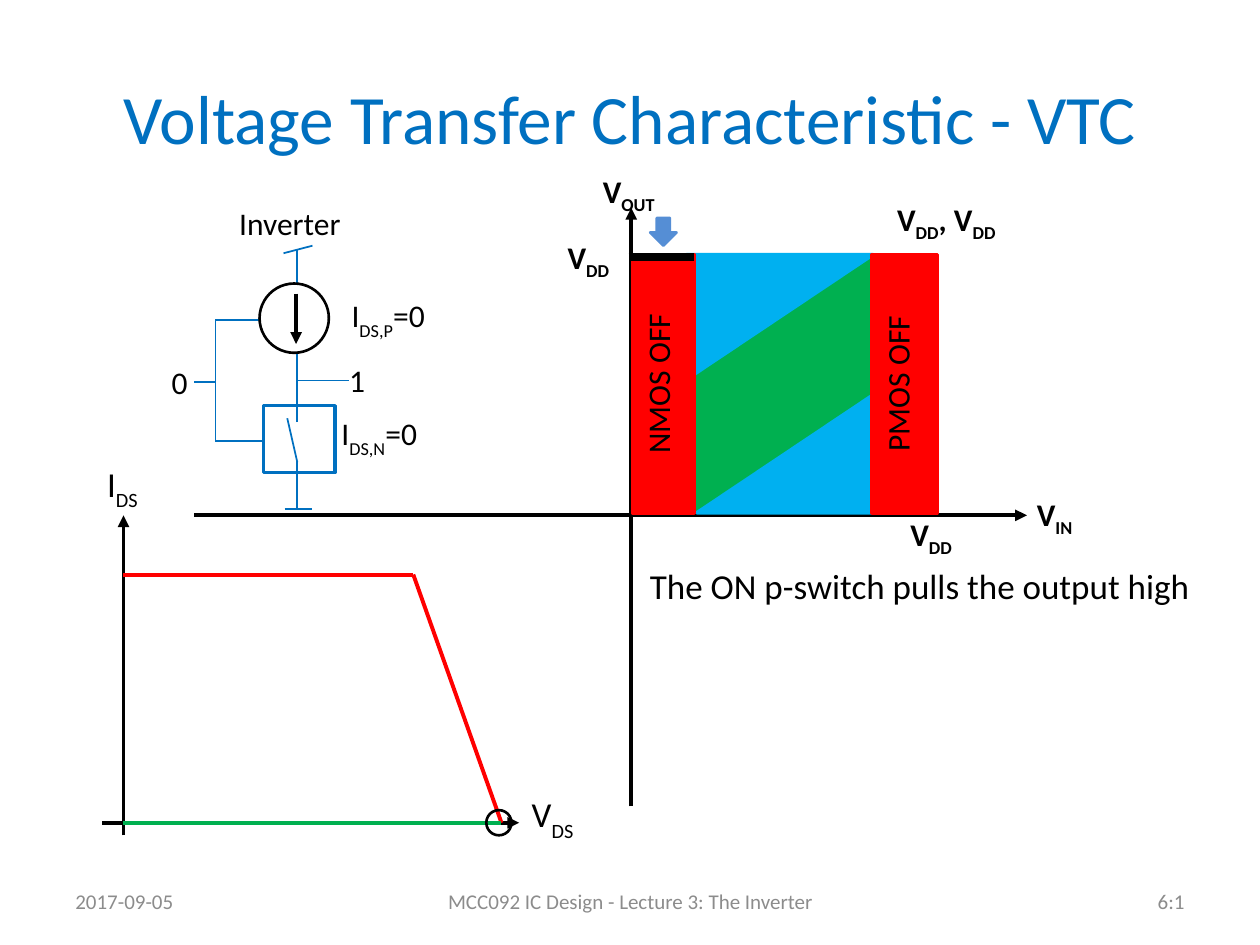
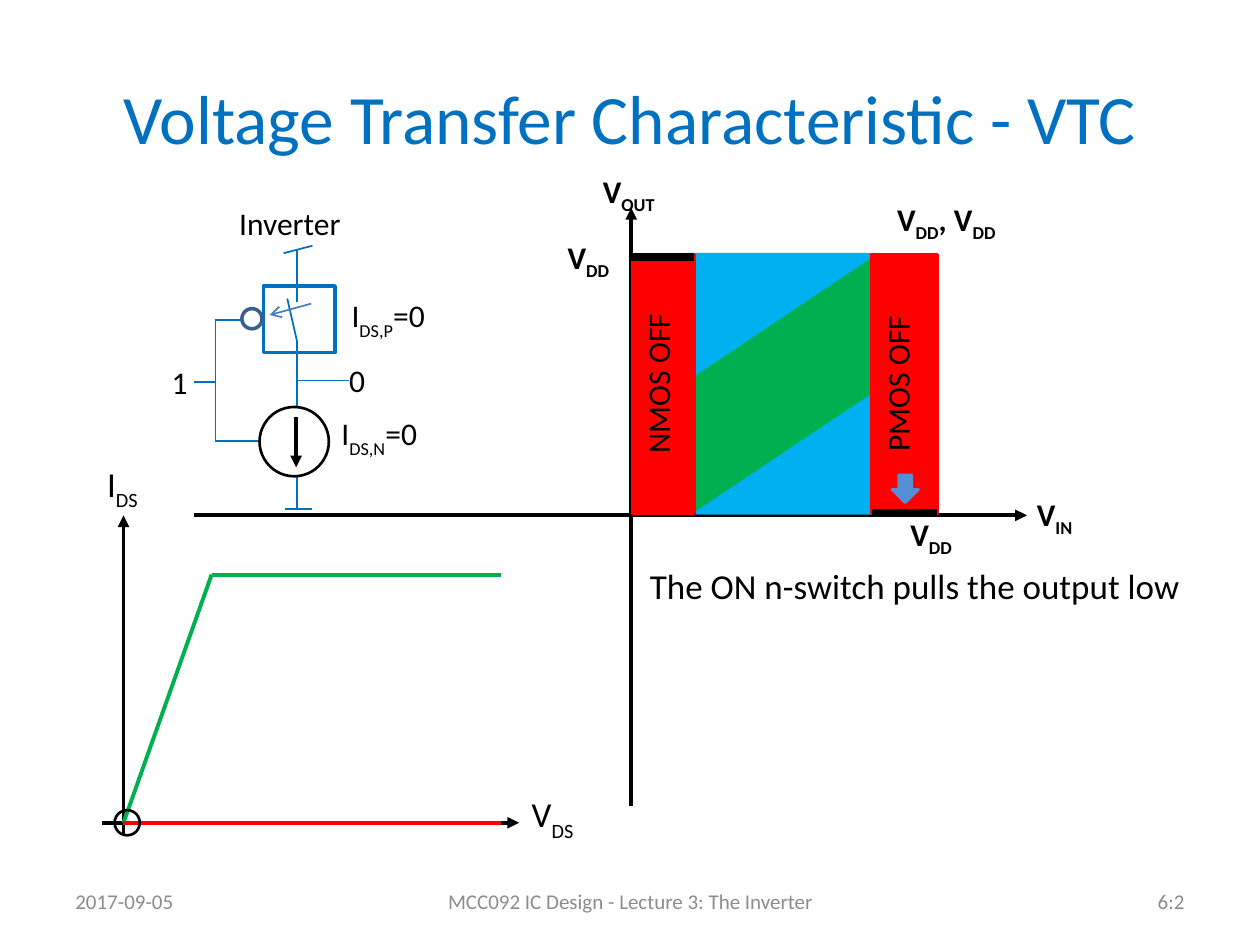
from itertools import pairwise

from lxml import etree
from pptx import Presentation
from pptx import util as u
from pptx.dml.color import RGBColor
from pptx.enum import shapes, text
from pptx.oxml.ns import qn

BLUE, SKY, GREEN, RED = "0070C0", "00B0F0", "00B050", "FF0000"
BLACK, WHITE, GREY = "000000", "FFFFFF", "8C8C8C"

THEME = {
    "font": "Calibri",
    # size, colour, bold, subscript baseline
    "text": {
        "title": (39.6, BLUE, False, 0),
        "footer": (12, GREY, False, 0),
        "node": (18, BLACK, False, -30000),
        "voltage": (18, BLACK, True, -25000),
        "graph": (20, BLACK, False, -30000),
    },
    # colour, width, arrowhead at the end
    "line": {
        "wire": (BLUE, 1, None),
        "blade arrow": ("4B7EBC", 1, "arrow"),
        "axis": (BLACK, 2.25, "triangle"),
        "p current": (RED, 2.25, None),
        "n current": (GREEN, 2.25, None),
        "transfer": (BLACK, 4.5, None),
    },
}

LEFT, CENTER, RIGHT = text.PP_ALIGN.LEFT, text.PP_ALIGN.CENTER, text.PP_ALIGN.RIGHT
MIDDLE = {"vertical_anchor": text.MSO_ANCHOR.MIDDLE}
NO_LEFT_INSET = {"margin_left": 0}
NO_WRAP = {"word_wrap": False}
TIGHT = {
    "margin_left": u.Inches(0.07),
    "margin_right": u.Inches(0.07),
    "margin_top": u.Inches(0.03),
    "margin_bottom": u.Inches(0.03),
}

STATES = [
    {
        "input": "0", "output": "1",
        "message": "The ON p-switch pulls the output high",
        "switch_top": 3.22, "source_top": 2.25, "p_is_switch": False,
        "load": [("p current", [(0.98, 4.56), (3.28, 4.56), (3.98, 6.53)]),
                 ("n current", [(0.98, 6.53), (3.98, 6.53)])],
        "operating_point": (3.86, 6.43), "pointer": (5.16, 1.73),
        "transfer": [(4.99, 2.04, 5.51, 2.04)],
    },
    {
        "input": "1", "output": "0",
        "message": "The ON n-switch pulls the output low",
        "switch_top": 2.27, "source_top": 3.23, "p_is_switch": True,
        "load": [("n current", [(3.98, 4.56), (1.68, 4.56), (0.98, 6.53)]),
                 ("p current", [(0.98, 6.53), (3.98, 6.53)])],
        "operating_point": (0.91, 6.43), "pointer": (7.08, 3.77),
        "transfer": [(4.99, 2.04, 5.51, 2.04), (6.92, 4.07, 7.44, 4.07)],
    },
]

GATE_X, DRAIN_X = 1.71, 2.36
INVERTER_WIRES = [
    (GATE_X, 3.5, 2.09, 3.5),
    (GATE_X, 2.54, 2.19, 2.54),
    (GATE_X, 3.5, GATE_X, 2.54),
    (1.54, 3.03, GATE_X, 3.03),
    (DRAIN_X, 4.03, DRAIN_X, 2.93),
    (DRAIN_X, 3.08, DRAIN_X, 1.98),
    (DRAIN_X, 3.02, 2.77, 3.02),
    (2.26, 4.04, 2.48, 4.04),
    (2.25, 2.01, 2.48, 1.95),
]
AXES = [
    (5.01, 6.4, 5.01, 1.65),
    (1.54, 4.09, 8.15, 4.09),
    (0.98, 6.63, 0.98, 4.09),
    (0.81, 6.53, 4.12, 6.53),
]
VTC_TOP, VTC_HEIGHT = 2.02, 2.05
SATURATION_LIMITS = [
    [(6.93, 2.02), (5.45, 3.01), (5.45, 2.02)],
    [(5.53, 4.07), (7.01, 3.08), (7.01, 4.07)],
]
OFF_REGIONS = [("NMOS OFF", 5.02, 0.49), ("PMOS OFF", 6.92, 0.52)]


def draw_line(slide, style, *ends):
    colour, width, arrowhead = THEME["line"][style]
    line = slide.shapes.add_connector(
        shapes.MSO_CONNECTOR.STRAIGHT, *map(u.Inches, ends))
    line.line.color.rgb = RGBColor.from_string(colour)
    line.line.width = u.Pt(width)
    properties = line._element.spPr
    if arrowhead:
        etree.SubElement(line.line._get_or_add_ln(), qn("a:tailEnd"), type=arrowhead)
    etree.SubElement(properties, qn("a:effectLst"))


def write(frame, words, style, align, formats):
    """Fill a frame; every second part between bars becomes a subscript."""
    size, colour, bold, baseline = THEME["text"][style]
    for name, value in {"word_wrap": True, **formats}.items():
        setattr(frame, name, value)
    paragraph = frame.paragraphs[0]
    paragraph.alignment = align
    for index, part in enumerate(words.split("|")):
        if not part:
            continue
        run = paragraph.add_run()
        run.text = part
        values = {"name": THEME["font"], "size": u.Pt(size), "bold": bold}
        for name, value in values.items():
            setattr(run.font, name, value)
        run.font.color.rgb = RGBColor.from_string(colour)
        if index % 2:
            run.font._rPr.set("baseline", str(baseline))


deck = Presentation()
deck.slide_width, deck.slide_height = u.Inches(10), u.Inches(7.5)

for number, state in enumerate(STATES, start=1):
    slide = deck.slides.add_slide(deck.slide_layouts[6])
    add_shape = slide.shapes.add_shape
    preset = shapes.MSO_SHAPE
    switch_top, source_top = state["switch_top"], state["source_top"]

    # Lines that lie behind the devices
    for wire in INVERTER_WIRES:
        draw_line(slide, "wire", *wire)
    for axis in AXES:
        draw_line(slide, "axis", *axis)
    for style, points in state["load"]:
        for start, end in pairwise(points):
            draw_line(slide, style, *start, *end)

    # Devices, operating regions and markers: kind, place, fill, outline, width
    blocks = [
        (preset.RECTANGLE, (2.09, switch_top, 0.57, 0.53), WHITE, BLUE, 2),
        (preset.OVAL, (2.06, source_top, 0.55, 0.55), WHITE, BLACK, 1.5),
        (preset.OVAL, (*state["operating_point"], 0.2, 0.2), None, BLACK, 1.5),
        (preset.RECTANGLE, (5.4, VTC_TOP, 1.66, VTC_HEIGHT), GREEN, GREEN, 1.5),
    ]
    if state["p_is_switch"]:
        blocks.append((preset.OVAL, (1.92, 2.45, 0.16, 0.16), WHITE, "3A5F8C", 2))
    painted = [(add_shape(kind, *map(u.Inches, place)), *paint)
               for kind, place, *paint in blocks]

    for corners in SATURATION_LIMITS:
        (first, *rest) = [tuple(map(u.Inches, corner)) for corner in corners]
        outline = slide.shapes.build_freeform(*first)
        outline.add_line_segments(rest, close=True)
        painted.append((outline.convert_to_shape(), SKY, SKY, 2))

    for words, left, width in OFF_REGIONS:
        region = add_shape(preset.RECTANGLE, *map(
            u.Inches, (left, VTC_TOP, width, VTC_HEIGHT)))
        write(region.text_frame, words, "node", CENTER,
              {"vertical_anchor": text.MSO_ANCHOR.TOP})
        region.text_frame._txBody.bodyPr.set("vert", "vert270")
        painted.append((region, RED, RED, 2))

    pointer = add_shape(preset.DOWN_ARROW, *map(
        u.Inches, (*state["pointer"], 0.21, 0.22)))
    painted.append((pointer, "558ED5", "558ED5", 1.5))

    for shape, fill, outline_colour, width in painted:
        shape.shadow.inherit = False
        if fill:
            shape.fill.solid()
            shape.fill.fore_color.rgb = RGBColor.from_string(fill)
        else:
            shape.fill.background()
        shape.line.color.rgb = RGBColor.from_string(outline_colour)
        shape.line.width = u.Pt(width)

    # Lines on top of the devices
    for x1, y1, x2, y2 in [(DRAIN_X, 0.66, DRAIN_X, 0.44),
                           (DRAIN_X, 0.13, DRAIN_X, -0.09),
                           (DRAIN_X, 0.45, 2.28, 0.1)]:
        draw_line(slide, "wire", x1, switch_top + y1, x2, switch_top + y2)
    if state["p_is_switch"]:
        draw_line(slide, "blade arrow", 2.47, 2.41, 2.14, 2.5)
    draw_line(slide, "axis", 2.35, source_top + 0.08, 2.35, source_top + 0.48)
    for level in state["transfer"]:
        draw_line(slide, "transfer", *level)

    # Wording: text, style, alignment, place, frame formats
    captions = [
        ("Voltage Transfer Characteristic - VTC", "title", CENTER,
         (0.5, 0.3, 9, 1.25), MIDDLE),
        ("2017-09-05", "footer", LEFT, (0.5, 6.95, 2.33, 0.4), MIDDLE),
        ("MCC092 IC Design - Lecture 3: The Inverter", "footer", CENTER,
         (3.42, 6.95, 3.17, 0.4), MIDDLE),
        (f"6:{number}", "footer", RIGHT, (7.17, 6.95, 2.33, 0.4), MIDDLE),
        ("Inverter", "node", LEFT, (1.8, 1.57, 1.01, 0.4), NO_WRAP),
        (state["input"], "node", CENTER, (1.18, 2.83, 0.49, 0.4), {}),
        (state["output"], "node", LEFT, (2.77, 2.82, 0.79, 0.4), NO_LEFT_INSET),
        ("I|DS,P|=0", "node", LEFT, (2.72, 2.32, 0.97, 0.57), TIGHT),
        ("I|DS,N|=0", "node", LEFT, (2.64, 3.26, 0.97, 0.57), TIGHT),
        ("V|IN", "voltage", CENTER, (8.04, 3.88, 0.66, 0.4), {}),
        ("V|OUT", "voltage", CENTER, (4.58, 1.32, 0.82, 0.4), {}),
        ("V|DD", "voltage", CENTER, (7.06, 4.04, 0.66, 0.4), {}),
        ("V|DD", "voltage", CENTER, (4.34, 1.84, 0.66, 0.4), {}),
        ("V|DD|, V|DD", "voltage", CENTER, (6.9, 1.54, 1.22, 0.4), {}),
        ("V|DS", "graph", LEFT, (4.15, 6.26, 0.7, 0.51), TIGHT),
        ("I|DS", "graph", LEFT, (0.78, 3.64, 0.64, 0.78), TIGHT),
        (state["message"], "graph", LEFT, (5.06, 4.43, 4.59, 2.23), {}),
    ]
    for words, style, align, place, formats in captions:
        caption = slide.shapes.add_textbox(*map(u.Inches, place))
        write(caption.text_frame, words, style, align, formats)
    caption.text_frame.paragraphs[0].space_before = u.Pt(4)

deck.save("out.pptx")
